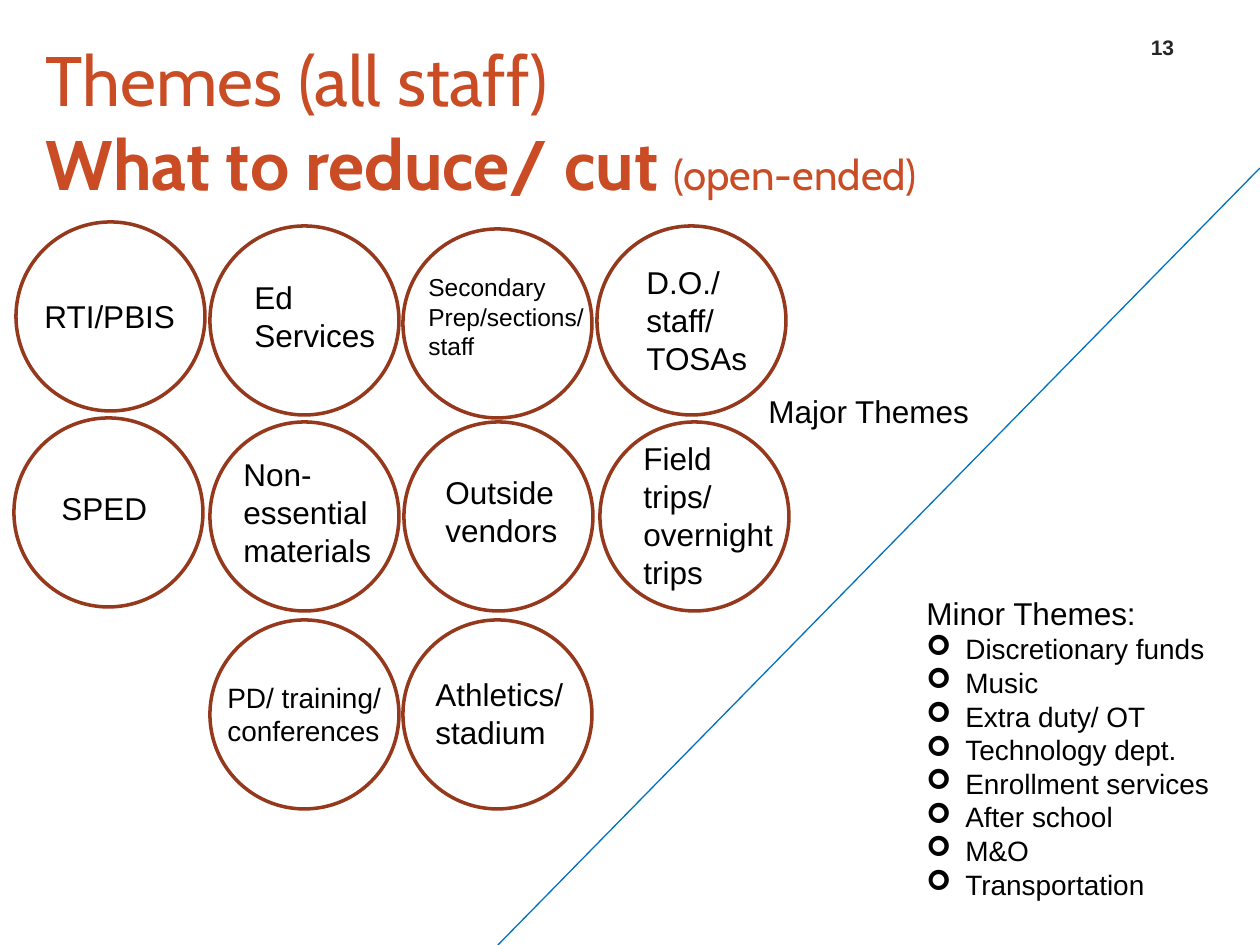
from lxml.etree import SubElement
from pptx import Presentation
from pptx.dml.color import RGBColor
from pptx.enum.shapes import MSO_CONNECTOR, MSO_SHAPE
from pptx.enum.text import MSO_ANCHOR, MSO_AUTO_SIZE, PP_ALIGN
from pptx.oxml.ns import qn
from pptx.util import Pt

PX = 914400 // 126
ORANGE = RGBColor(0xC9, 0x4C, 0x25)
RUST = RGBColor(0x95, 0x38, 0x1B)
BLUE = RGBColor(0x00, 0x70, 0xC0)
BLACK = RGBColor(0x00, 0x00, 0x00)
CHARCOAL = RGBColor(0x26, 0x26, 0x26)

TITLE = [
    ("Themes (all staff) \v", 40, False),
    ("What to reduce/ cut ", 40, True),
    ("(open-ended)", 24, False),
]
DIAMETER = 189
# label, size, lines, circle (left, top), label (left, top, width)
MAJOR_THEMES = [
    ("RTI/PBIS", 18, 1, (16, 222), (32, 291, 158)),
    ("Ed Services", 18, 2, (210, 226), (242, 272, 158)),
    ("Secondary Prep/sections/ staff", 14, 3, (403, 229), (416, 266, 213)),
    ("D.O./ staff/ TOSAs", 18, 3, (597, 226), (634, 257, 158)),
    ("SPED", 18, 1, (14, 418), (49, 483, 158)),
    ("Non-essential materials", 18, 3, (210, 422), (231, 449, 158)),
    ("Outside vendors", 18, 2, (404, 422), (433, 467, 158)),
    ("Field trips/ overnight trips", 18, 4, (600, 422), (631, 433, 158)),
    ("PD/ training/ conferences", 16, 2, (210, 620), (215, 674, 204)),
    ("Athletics/ stadium", 18, 2, (403, 620), (423, 669, 158)),
]
MINOR_THEMES = [
    "Discretionary funds", "Music", "Extra duty/ OT", "Technology dept.",
    "Enrollment services", "After school", "M&O", "Transportation",
]


def px(*lengths):
    return [round(length * PX) for length in lengths]


def style(font, color=BLACK, **values):
    for name, value in {"name": "Arial", **values}.items():
        setattr(font, name, value)
    font.color.rgb = color


def add_label(shapes, text, size, lines, left, top, width):
    """Add a text box whose height follows from its number of lines."""
    box = shapes.add_textbox(*px(left, top, width, 13 + lines * size * 2.1))
    frame = box.text_frame
    frame.word_wrap = True
    frame.auto_size = MSO_AUTO_SIZE.SHAPE_TO_FIT_TEXT
    para = frame.paragraphs[0]
    para.text = text
    style(para.font, size=Pt(size))
    return box


def add_title(slide):
    title = slide.shapes.title
    title.left, title.top, title.width, title.height = px(21, 66, 977, 110)
    frame = title.text_frame
    frame.margin_left = frame.margin_right = 0
    frame.auto_size = MSO_AUTO_SIZE.NONE
    frame.vertical_anchor = MSO_ANCHOR.MIDDLE
    para = frame.paragraphs[0]
    para.alignment = PP_ALIGN.LEFT
    para._p.get_or_add_pPr().set("marL", str(25 * PX))
    for text, size, bold in TITLE:
        before = len(para.runs)
        if text.endswith("\v"):
            span = para.add_run()
            span.text = text[:-1]
            para.add_line_break()
        else:
            span = para.add_run()
            span.text = text
        style(span.font, ORANGE, name="Cabin", size=Pt(size), bold=bold)


def add_major_theme(slide, label, size, lines, circle_at, label_at):
    group = slide.shapes.add_group_shape()
    circle = group.shapes.add_shape(
        MSO_SHAPE.OVAL, *px(*circle_at, DIAMETER, DIAMETER))
    circle.shadow.inherit = False
    circle.fill.background()
    circle.line.color.rgb = RUST
    circle.line.width = Pt(2)
    add_label(group.shapes, label, size, lines, *label_at)


def add_minor_themes(slide):
    box = add_label(slide.shapes, "Minor Themes:", 18, 1, 914, 588, 399)
    box.height = px(323)[0]
    for theme in MINOR_THEMES:
        para = box.text_frame.add_paragraph()
        para.text = theme
        properties = para._p.get_or_add_pPr()
        properties.set("marL", str(39 * PX))
        properties.set("indent", str(-39 * PX))
        SubElement(properties, qn("a:buFont")).set("typeface", "Wingdings")
        SubElement(properties, qn("a:buChar")).set("char", "➢")
        style(para.font, size=Pt(16))


def add_divider(slide):
    divider = slide.shapes.add_connector(
        MSO_CONNECTOR.STRAIGHT, *px(498, 945, 1260, 168))
    divider.line.color.rgb = BLUE
    divider.line.width = Pt(0.75)
    SubElement(divider._element.spPr, qn("a:effectLst"))


def add_page_number(slide):
    box = slide.shapes.add_textbox(*px(1128, 24, 69, 42))
    box.text_frame.word_wrap = True
    box.text_frame.vertical_anchor = MSO_ANCHOR.BOTTOM
    para = box.text_frame.paragraphs[0]
    para.text = "13"
    para.alignment = PP_ALIGN.CENTER
    style(para.font, CHARCOAL, size=Pt(12), bold=True)


def main():
    deck = Presentation()
    deck.slide_width, deck.slide_height = px(1260, 945)
    slide = deck.slides.add_slide(deck.slide_layouts[5])
    add_page_number(slide)
    add_title(slide)
    for theme in MAJOR_THEMES:
        add_major_theme(slide, *theme)
    add_divider(slide)
    add_minor_themes(slide)
    add_label(slide.shapes, "Major Themes", 18, 1, 756, 386, 262)
    deck.save("out.pptx")


if __name__ == "__main__":
    main()
